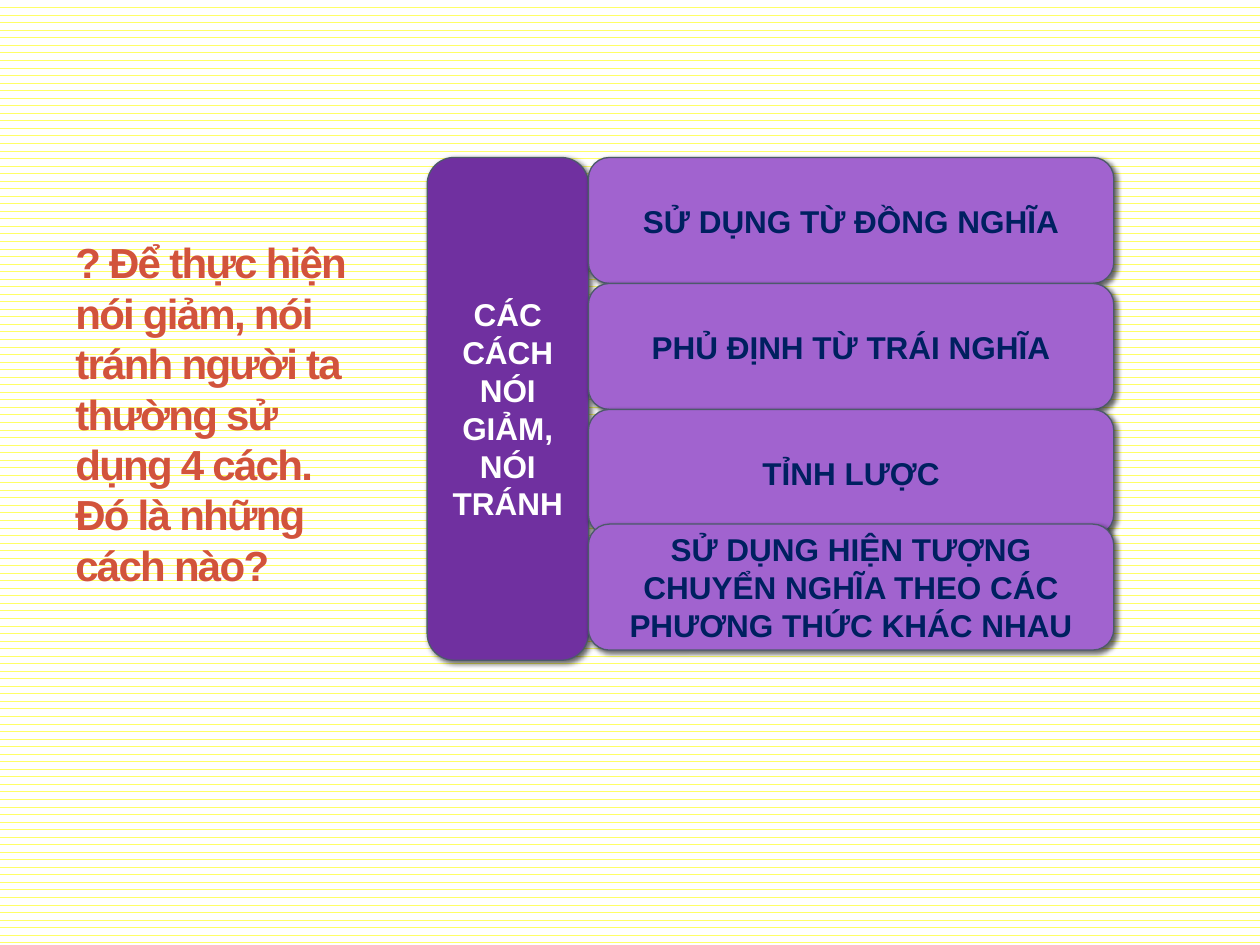
from lxml import etree
from pptx import Presentation
from pptx import util as u
from pptx.dml.color import RGBColor
from pptx.enum import dml, shapes, text
from pptx.oxml.ns import qn

QUESTION = ("? Để thực hiện nói giảm, nói tránh người ta thường sử dụng 4 cách. "
            "Đó là những cách nào?")
HEADING = "CÁC CÁCH NÓI GIẢM, NÓI TRÁNH"
METHODS = [
    "SỬ DỤNG TỪ ĐỒNG NGHĨA",
    "PHỦ ĐỊNH TỪ TRÁI NGHĨA",
    "TỈNH LƯỢC",
    "SỬ DỤNG HIỆN TƯỢNG CHUYỂN NGHĨA THEO CÁC PHƯƠNG THỨC KHÁC NHAU",
]


def rgb(hex_color):
    return RGBColor.from_string(hex_color)


class Deck:
    font = "Arial"
    outline = "4C5A6A"

    def __init__(self, width, height):
        self.prs = Presentation()
        self.prs.slide_width = u.Inches(width)
        self.prs.slide_height = u.Inches(height)
        self.slide = self.prs.slides.add_slide(self.prs.slide_layouts[6])

    def striped_background(self, stripe, base):
        fill = self.slide.background.fill
        fill.patterned()
        fill.pattern = dml.MSO_PATTERN.DASHED_HORIZONTAL
        fill.fore_color.rgb = rgb(stripe)
        fill.back_color.rgb = rgb(base)

    def add_words(self, owner, words, size, color, anchor, align):
        frame = owner.text_frame
        frame.word_wrap = True
        frame.vertical_anchor = anchor
        paragraph = frame.paragraphs[0]
        paragraph.alignment = align
        run = paragraph.add_run()
        run.text = words
        run.font.name = self.font
        run.font.size = u.Pt(size)
        run.font.bold = True
        run.font.color.rgb = rgb(color)
        return run

    def question(self, at, words, color):
        box = self.slide.shapes.add_textbox(*map(u.Inches, at))
        run = self.add_words(box, words, 24, color,
                             text.MSO_ANCHOR.BOTTOM, text.PP_ALIGN.LEFT)
        run._r.get_or_add_rPr().set("spc", "-100")

    def card(self, at, words, fill, color):
        card = self.slide.shapes.add_shape(
            shapes.MSO_SHAPE.ROUNDED_RECTANGLE, *map(u.Inches, at))
        card.fill.solid()
        card.fill.fore_color.rgb = rgb(fill)
        card.line.color.rgb = rgb(self.outline)
        card.line.width = u.Pt(0.75)
        self.drop_shadow(card)
        self.add_words(card, words, 18, color,
                       text.MSO_ANCHOR.MIDDLE, text.PP_ALIGN.CENTER)

    def drop_shadow(self, card):
        """Cast a 60 % black shadow down and to the right."""
        card.shadow.inherit = False
        effects = card._element.spPr.find(qn("a:effectLst"))
        shadow = etree.SubElement(
            effects, qn("a:outerShdw"), blurRad=str(int(u.Pt(3))),
            dist=str(int(u.Pt(2))), dir=str(45 * 60000), algn="ctr",
            rotWithShape="0")
        black = etree.SubElement(shadow, qn("a:srgbClr"), val="000000")
        etree.SubElement(black, qn("a:alpha"), val="60000")


def main():
    deck = Deck(10, 7.5)
    deck.striped_background("FFFF66", "FFFFFF")
    deck.question((0.5, 1.98, 2.34, 2.75), QUESTION, "D2533C")

    left, top, heading_width = 3.39, 1.25, 1.28
    deck.card((left, top, heading_width, 3.99), HEADING, "7030A0", "FFFFFF")

    method_left, method_width, method_height = left + heading_width, 4.17, 1
    last_top = 4.16  # the last card overlaps the one above it
    for row, method in enumerate(METHODS):
        method_top = min(top + row * method_height, last_top)
        deck.card((method_left, method_top, method_width, method_height),
                  method, "A163CF", "002060")

    deck.prs.save("out.pptx")


if __name__ == "__main__":
    main()
